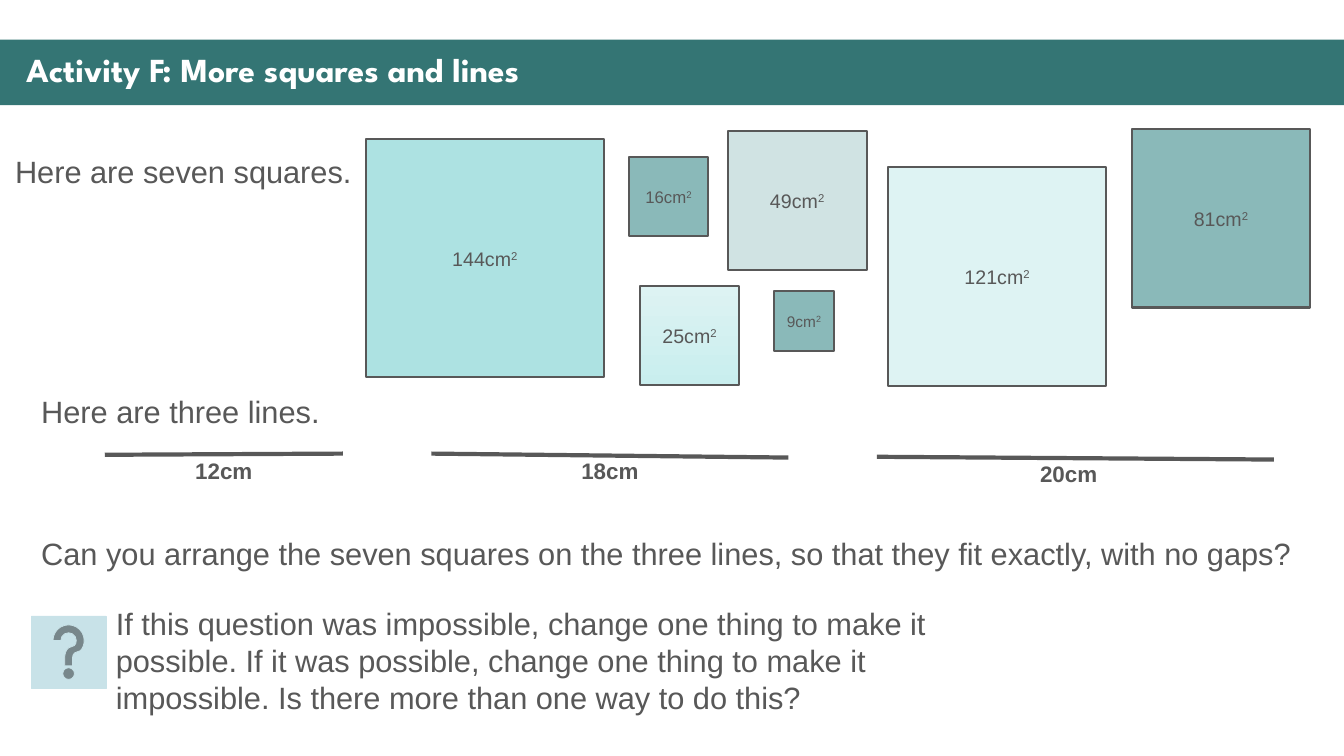
from typing import NamedTuple

import pptx
import pptx.dml.color
import pptx.enum.shapes
import pptx.enum.text
import pptx.oxml
import pptx.util
from pptx.util import Cm

COLOURS = {
    "banner": "347574",
    "ink": "585858",
    "white": "FFFFFF",
    "teal": "8AB9B9",
    "aqua": "ADE2E2",
    "ice": "DEF3F3",
    "sage": "D0E3E3",
    "mist": "DDF3F3",
    "foam": "C9EEEE",
    "help": "C8E2E8",
}
SCALE = 0.5  # slide centimetres per labelled centimetre
SHAPE = pptx.enum.shapes.MSO_SHAPE
ALIGN = pptx.enum.text.PP_ALIGN
MIDDLE = pptx.enum.text.MSO_ANCHOR.MIDDLE


class Square(NamedTuple):
    side: int
    left: float
    top: float
    fills: tuple[str, ...]  # two names make a gradient from top to bottom
    size: int = 14


class Line(NamedTuple):
    length: int
    left: float
    start_y: float
    end_y: float
    label_left: float
    label_width: float


class Sentence(NamedTuple):
    text: str
    left: float
    top: float
    width: float
    height: float
    wrap: bool = False


SQUARES = [
    Square(4, 15.85, 3.96, ("teal",), 12),
    Square(12, 9.22, 3.51, ("aqua",)),
    Square(11, 22.38, 4.22, ("ice",)),
    Square(9, 28.52, 3.25, ("teal",)),
    Square(7, 18.34, 3.3, ("sage",)),
    Square(5, 16.13, 7.21, ("mist", "foam")),
    Square(3, 19.51, 7.34, ("teal",), 11),
]
LINES = [
    Line(12, 2.64, 11.46, 11.43, 4.67, 2.34),
    Line(18, 10.87, 11.43, 11.53, 14.4, 2.44),
    Line(20, 22.1, 11.51, 11.58, 25.96, 2.26),
]
SENTENCES = [
    Sentence("Here are seven squares.", 0.13, 3.73, 9.12, 1.19),
    Sentence("Here are three lines.", 0.79, 9.78, 7.62, 1.19),
    Sentence("Can you arrange the seven squares on the three lines, "
             "so that they fit exactly, with no gaps?", 0.79, 13.36, 32.64, 1.19),
    Sentence("If this question was impossible, change one thing to make it possible. "
             "If it was possible, change one thing to make it impossible. "
             "Is there more than one way to do this?", 2.67, 15.11, 22.91, 3.07, True),
]


def colour(name: str) -> pptx.dml.color.RGBColor:
    return pptx.dml.color.RGBColor.from_string(COLOURS[name])


def add_span(para, text: str, size: int, ink: str = "ink", bold: bool = False,
             font: str = "Arial"):
    span = para.add_run()
    span.text = text
    span.font.name = font
    span.font.size = pptx.util.Pt(size)
    span.font.bold = bold
    span.font.color.rgb = colour(ink)
    return span


def add_block(page, kind, left: float, top: float, width: float, height: float,
              fills: tuple[str, ...], outline: str | None = None, weight: float = 1.5):
    block = page.shapes.add_shape(kind, Cm(left), Cm(top), Cm(width), Cm(height))
    block.shadow.inherit = False
    if len(fills) == 1:
        block.fill.solid()
        block.fill.fore_color.rgb = colour(fills[0])
    else:
        block.fill.gradient()
        block.fill.gradient_angle = 270
        for stop, name in zip(block.fill.gradient_stops, fills):
            stop.color.rgb = colour(name)
    if outline:
        block.line.color.rgb = colour(outline)
        block.line.width = pptx.util.Pt(weight)
    else:
        block.line.fill.background()
    return block


def add_square(page, square: Square) -> None:
    extent = square.side * SCALE
    block = add_block(page, SHAPE.RECTANGLE, square.left, square.top, extent, extent,
                      square.fills, "ink")
    block.text_frame.vertical_anchor = MIDDLE
    para = block.text_frame.paragraphs[0]
    para.alignment = ALIGN.CENTER
    add_span(para, f"{square.side ** 2}cm", square.size)
    power = add_span(para, "2", square.size)
    power.font._element.set("baseline", "30000")


def add_text(page, sentence: Sentence, size: int = 22, bold: bool = False) -> None:
    box = page.shapes.add_textbox(Cm(sentence.left), Cm(sentence.top),
                                  Cm(sentence.width), Cm(sentence.height))
    box.text_frame.word_wrap = sentence.wrap
    add_span(box.text_frame.paragraphs[0], sentence.text, size, bold=bold)


def add_line(page, line: Line) -> None:
    rule = page.shapes.add_connector(
        pptx.enum.shapes.MSO_CONNECTOR.STRAIGHT, Cm(line.left), Cm(line.start_y),
        Cm(line.left + line.length * SCALE), Cm(line.end_y))
    rule.line.color.rgb = colour("ink")
    rule.line.width = pptx.util.Pt(3)
    rule.element.spPr.append(pptx.oxml.parse_xml(
        '<a:effectLst xmlns:a="http://schemas.openxmlformats.org/drawingml/2006/main"/>'))
    label = Sentence(f"{line.length}cm", line.label_left, min(line.start_y, line.end_y) - 0.03,
                     line.label_width, 0.94, True)
    add_text(page, label, 16, True)


def add_title(page, text: str) -> None:
    title = page.shapes.title
    title.left, title.top, title.width, title.height = Cm(0.41), Cm(1.22), Cm(33.12), Cm(1.19)
    title.text_frame.vertical_anchor = MIDDLE
    para = title.text_frame.paragraphs[0]
    para.alignment = ALIGN.LEFT
    para.line_spacing = 0.9
    add_span(para, text, 24, "white", True, "League Spartan")
    # The banner lies behind the title
    banner = add_block(page, SHAPE.RECTANGLE, 0, 1, 33.87, 1.65, ("banner",))
    title.element.addprevious(banner.element)


def main() -> None:
    deck = pptx.Presentation()
    deck.slide_width, deck.slide_height = Cm(33.87), Cm(19.05)
    page = deck.slides.add_slide(deck.slide_layouts.get_by_name("Title Only"))
    add_title(page, "Activity F: More squares and lines")

    # Squares and lines, drawn to the same scale
    for square in SQUARES:
        add_square(page, square)
    for line in LINES:
        add_line(page, line)

    # Instructions and question symbol
    for sentence in SENTENCES:
        add_text(page, sentence)
    add_block(page, SHAPE.ACTION_BUTTON_HELP, 0.79, 15.52, 1.88, 1.83, ("help",), "help", 0.5)

    deck.save("out.pptx")


if __name__ == "__main__":
    main()
